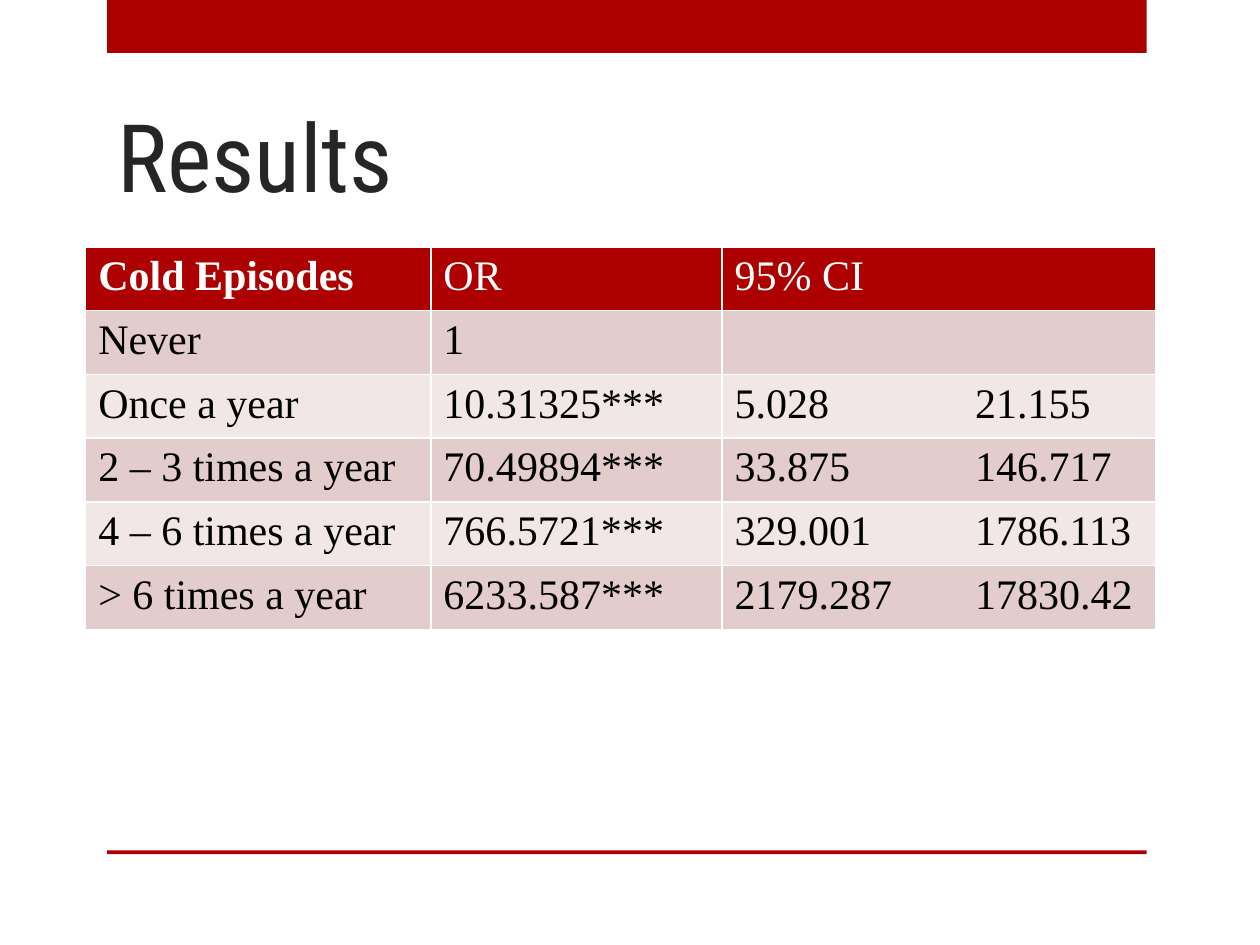
"""Builds the results slide: odds ratios by number of cold episodes."""
from lxml import etree
from pptx import Presentation
from pptx import util as u
from pptx.dml.color import RGBColor
from pptx.enum import shapes, text
from pptx.oxml.ns import qn

W, H = 10, 7.5
COLORS = {"accent": "AD0101", "title": "262626", "text": "000000",
          "white": "FFFFFF", "odd": "E3CCCC", "even": "F1E7E7"}
COLS = (2.74, 2.31, 3.44)
ROW_H = 0.506
TAB = 1.91
ROWS = [
    ("Cold Episodes", "OR", "95% CI"),
    ("Never", "1", ""),
    ("Once a year", "10.31325***", "5.028\t21.155"),
    ("2 – 3 times a year", "70.49894***", "33.875\t146.717"),
    ("4 – 6 times a year", "766.5721***", "329.001\t1786.113"),
    ("> 6 times a year", "6233.587***", "2179.287\t17830.42"),
]


def rgb(name):
    return RGBColor.from_string(COLORS[name])


def style(p, font, size, color, bold=False):
    for r in p.runs:
        r.font.name, r.font.size, r.font.bold = font, u.Pt(size), bold
        r.font.color.rgb = rgb(color)


def add_bar(s, top, height):
    sp = s.shapes.add_shape(shapes.MSO_SHAPE.RECTANGLE, u.Inches(0.85), u.Inches(top),
                            u.Inches(8.25), u.Inches(height))
    sp.shadow.inherit = False
    sp.fill.solid()
    sp.fill.fore_color.rgb = rgb("accent")
    sp.line.fill.background()


def set_title(s, words):
    sp = s.shapes.title
    sp.left, sp.top, sp.width, sp.height = map(u.Inches, (0.83, 0.38, 7.42, 1.35))
    tf = sp.text_frame
    tf.text = words
    tf.vertical_anchor = text.MSO_ANCHOR.BOTTOM
    p = tf.paragraphs[0]
    p.alignment = text.PP_ALIGN.LEFT
    style(p, "Roboto Condensed", 54, "title")


def add_borders(cell):
    tcPr = cell._tc.get_or_add_tcPr()
    for side in "LRTB":
        ln = etree.SubElement(tcPr, qn(f"a:ln{side}"), w=str(u.Pt(1)))
        fill = etree.SubElement(ln, qn("a:solidFill"))
        etree.SubElement(fill, qn("a:srgbClr"), val=COLORS["white"])


def add_tab_stop(p, inches):
    tabs = etree.SubElement(p._p.get_or_add_pPr(), qn("a:tabLst"))
    etree.SubElement(tabs, qn("a:tab"), pos=str(u.Inches(inches)), algn="l")


def fill_cell(cell, words, row, col):
    add_borders(cell)
    cell.fill.solid()
    cell.fill.fore_color.rgb = rgb("accent" if row == 0 else "odd" if row % 2 else "even")
    p = cell.text_frame.paragraphs[0]
    p.text = words
    if "\t" in words:
        add_tab_stop(p, TAB)
    style(p, "Times New Roman", 24, "text" if row else "white", bold=row == col == 0)


def add_results(s):
    frame = s.shapes.add_table(len(ROWS), len(COLS), u.Inches(0.68), u.Inches(1.96),
                               u.Inches(sum(COLS)), u.Inches(ROW_H * len(ROWS)))
    table = frame.table
    for column, width in zip(table.columns, COLS):
        column.width = u.Inches(width)
    for i, row in enumerate(ROWS):
        for j, words in enumerate(row):
            fill_cell(table.cell(i, j), words, i, j)


def main():
    prs = Presentation()
    prs.slide_width, prs.slide_height = u.Inches(W), u.Inches(H)
    s = prs.slides.add_slide(prs.slide_layouts[5])
    add_bar(s, 0, 0.42)
    add_bar(s, 0.9 * H, 0.03)
    set_title(s, "Results")
    add_results(s)
    prs.save("out.pptx")


if __name__ == "__main__":
    main()
